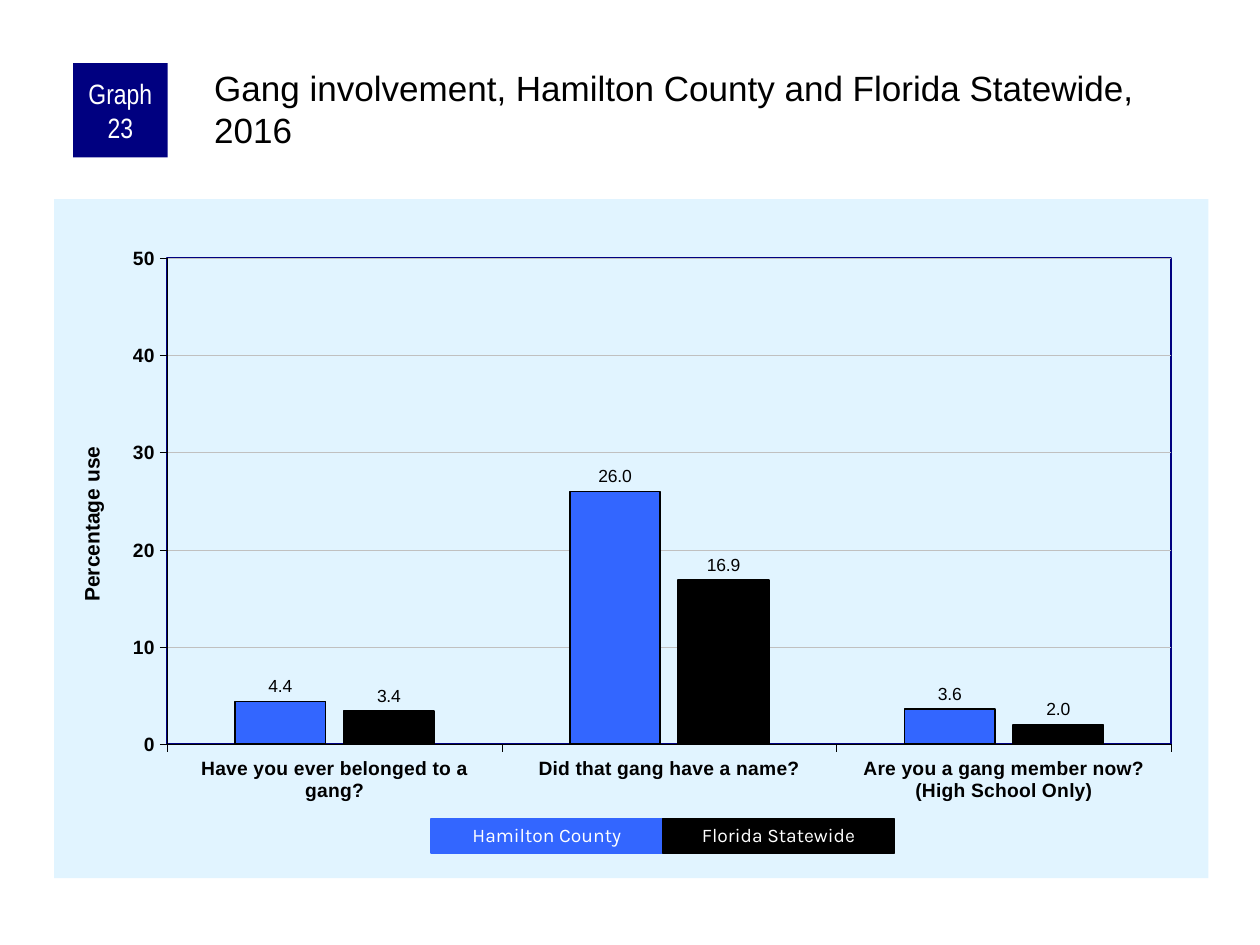
from lxml import etree
from pptx import Presentation
from pptx import util as u
from pptx.chart.data import CategoryChartData
from pptx.dml.color import RGBColor
from pptx.enum import chart as charts, shapes, text
from pptx.oxml import parse_xml
from pptx.oxml.ns import nsdecls, qn

PX = 9144  # EMU per px, 100 px to the inch
NAVY, BLUE, BLACK, WHITE = "000080", "3366FF", "000000", "FFFFFF"
PALE, GREY = "E1F4FF", "C0C0C0"

QUESTIONS = [
    "Have you ever belonged to a gang?",
    "Did that gang have a name?",
    "Are you a gang member now?\n(High School Only)",
]
SERIES = [
    ("Hamilton County", (4.4, 26.0, 3.6), BLUE),
    ("Florida Statewide", (3.4, 16.9, 2.0), BLACK),
]


def rgb(value):
    return RGBColor.from_string(value)


def px(*lengths):
    return [u.Emu(length * PX) for length in lengths]


def set_font(font, size, color=BLACK, name="Arial", bold=False):
    font.size, font.name, font.bold = u.Pt(size), name, bold
    font.color.rgb = rgb(color)


def set_line(line, color, width):
    line.color.rgb = rgb(color)
    line.width = u.Pt(width)


def write(shape, words, align=text.PP_ALIGN.CENTER, anchor=text.MSO_ANCHOR.MIDDLE,
          insets=(10, 5, 10, 5), spacing=1.0, **font):
    """Insets are px in the order left, top, right, bottom."""
    frame = shape.text_frame
    frame.word_wrap = True
    frame.auto_size = text.MSO_AUTO_SIZE.NONE
    frame.vertical_anchor = anchor
    (frame.margin_left, frame.margin_top,
     frame.margin_right, frame.margin_bottom) = px(*insets)
    para = frame.paragraphs[0]
    para.alignment, para.line_spacing = align, spacing
    span = para.add_run()
    span.text = words
    set_font(span.font, **font)


def area_format(fill="", line=""):
    """Chart area properties, which python-pptx has no method for."""
    def solid(color):
        if not color:
            return "<a:noFill/>"
        return f'<a:solidFill><a:srgbClr val="{color}"/></a:solidFill>'
    return parse_xml(f'<c:spPr {nsdecls("c", "a")}>{solid(fill)}'
                     f'<a:ln w="12700">{solid(line)}</a:ln></c:spPr>')


def place_plot(plot_area, **fractions):
    """Fix the inner plot area as fractions of the chart."""
    for old in plot_area.findall(qn("c:layout")):
        plot_area.remove(old)
    layout = etree.Element(qn("c:layout"))
    manual = etree.SubElement(layout, qn("c:manualLayout"))
    settings = dict(layoutTarget="inner", xMode="edge", yMode="edge", **fractions)
    for tag, value in settings.items():
        etree.SubElement(manual, qn(f"c:{tag}")).set("val", str(value))
    plot_area.insert(0, layout)


class GraphSlide:
    def __init__(self, deck):
        self.page = deck.slides.add_slide(deck.slide_layouts[5])

    def title(self, words, *place):
        box = self.page.shapes.title
        box.left, box.top, box.width, box.height = px(*place)
        write(box, words, align=text.PP_ALIGN.LEFT, anchor=text.MSO_ANCHOR.TOP,
              insets=(3, 3, 0, 0), size=20)

    def block(self, words, *place, fill, outlined=False, **style):
        box = self.page.shapes.add_shape(shapes.MSO_SHAPE.RECTANGLE, *px(*place))
        box.shadow.inherit = False
        box.fill.solid()
        box.fill.fore_color.rgb = rgb(fill)
        if outlined:
            set_line(box.line, fill, 0.75)
        else:
            box.line.fill.background()
        write(box, words, color=WHITE, **style)

    def column_chart(self, *place):
        data = CategoryChartData(number_format="0.0")
        data.categories = QUESTIONS
        for name, values, _ in SERIES:
            data.add_series(name, values)
        chart = self.page.shapes.add_chart(
            charts.XL_CHART_TYPE.COLUMN_CLUSTERED, *px(*place), data).chart
        chart.has_legend = chart.has_title = False
        set_font(chart.font, 11.5)
        self.format_axes(chart)
        self.format_columns(chart.plots[0])

        plot_area = chart.plots[0]._element.getparent()
        place_plot(plot_area, x=0.098, y=0.087, w=0.87, h=0.716)
        plot_area.append(area_format(line=NAVY))
        plot_area.getparent().addnext(area_format(fill=PALE))

    def format_axes(self, chart):
        for axis in (chart.category_axis, chart.value_axis):
            set_font(axis.tick_labels.font, 11, bold=True)
            set_line(axis.format.line, BLACK, 0.25)
            axis.major_tick_mark = charts.XL_TICK_MARK.OUTSIDE
            axis.minor_tick_mark = charts.XL_TICK_MARK.NONE
        scale = chart.value_axis
        scale.minimum_scale, scale.maximum_scale, scale.major_unit = 0, 50, 10
        scale.tick_labels.number_format = "0"
        scale.tick_labels.number_format_is_linked = False
        scale.has_major_gridlines = True
        set_line(scale.major_gridlines.format.line, GREY, 0.25)
        frame = scale.axis_title.text_frame
        span = frame.paragraphs[0].add_run()
        span.text = "Percentage use"
        set_font(span.font, 12, bold=True)
        body = frame._txBody.find(qn("a:bodyPr"))
        body.set("rot", "-5400000")
        body.set("vert", "horz")

    def format_columns(self, plot):
        plot.gap_width, plot.overlap = 150, -20
        plot.vary_by_categories = False
        for series, (_, _, color) in zip(plot.series, SERIES):
            series.format.fill.solid()
            series.format.fill.fore_color.rgb = rgb(color)
            set_line(series.format.line, BLACK, 1)
            labels = series.data_labels
            labels.show_value = True
            labels.number_format = "0.0"
            labels.number_format_is_linked = False
            labels.position = charts.XL_LABEL_POSITION.OUTSIDE_END
            set_font(labels.font, 10)


def main():
    deck = Presentation()
    deck.slide_width, deck.slide_height = px(1000, 750)
    slide = GraphSlide(deck)
    slide.column_chart(43, 158, 916, 539)
    slide.block("Graph 23", 58, 50, 75, 75, fill=NAVY,
                insets=(5, 0, 5, 0), size=16, name="Arial Narrow")
    slide.title("Gang involvement, Hamilton County and Florida Statewide, 2016",
                167, 50, 792, 83)
    key_width = 184
    for index, (name, _, color) in enumerate(SERIES):
        slide.block(name, 342 + index * key_width, 650, key_width, 27, fill=color,
                    outlined=True, spacing=0.9, size=11, name="Karla")
    deck.save("out.pptx")


if __name__ == "__main__":
    main()
